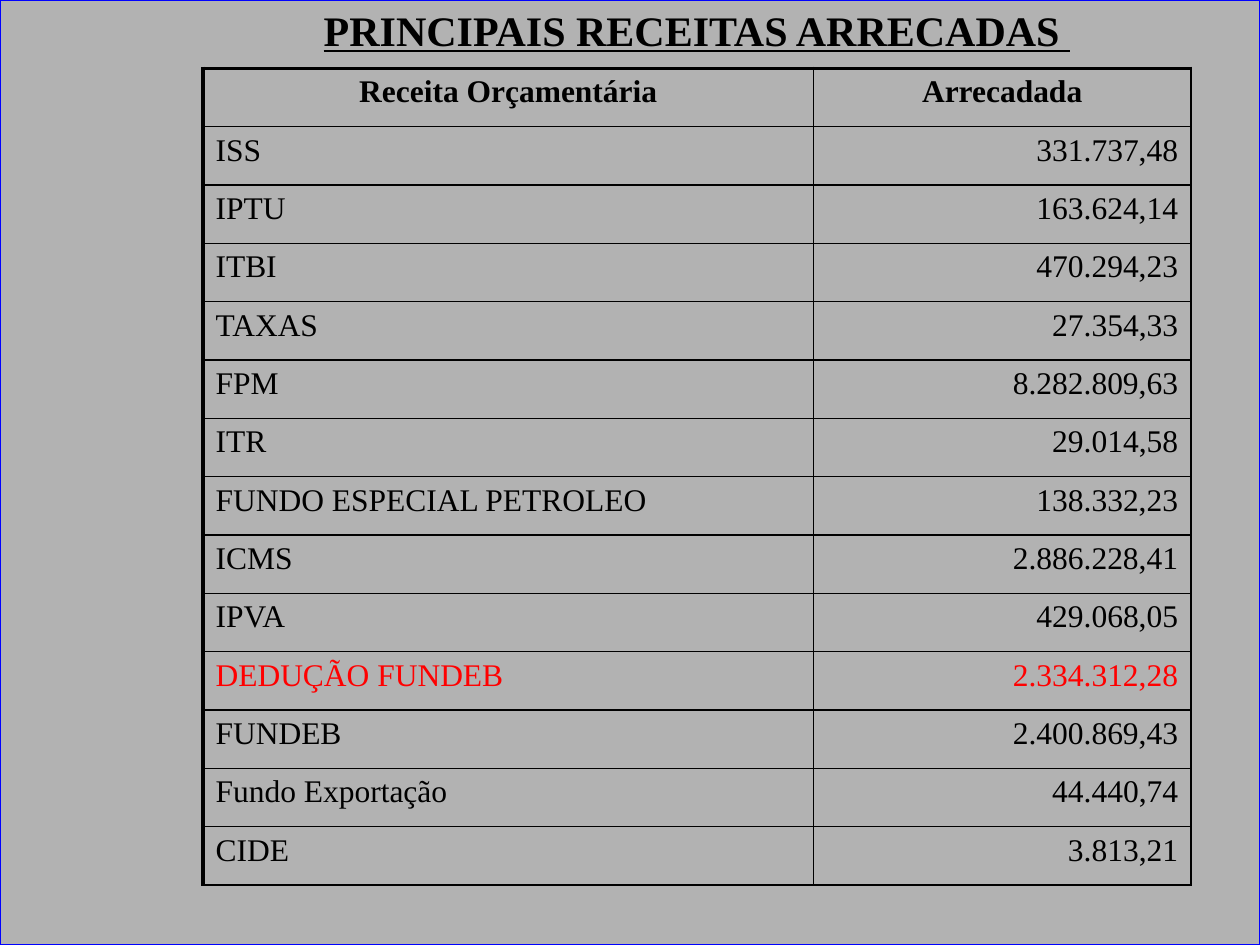
from dataclasses import dataclass
from typing import NamedTuple

from lxml import etree
from pptx import Presentation
from pptx.dml.color import RGBColor
from pptx.enum.shapes import MSO_SHAPE
from pptx.enum.text import MSO_ANCHOR, PP_ALIGN
from pptx.oxml.ns import qn
from pptx.util import Pt

RECT = MSO_SHAPE.RECTANGLE
TOP = MSO_ANCHOR.TOP
LEFT, CENTER, RIGHT = PP_ALIGN.LEFT, PP_ALIGN.CENTER, PP_ALIGN.RIGHT


@dataclass(frozen=True)
class Theme:
    font: str = "Times New Roman"
    ink: str = "000000"
    alert: str = "FF0000"
    back: str = "B2B2B2"
    frame: str = "0000FF"
    head: int = 24
    body: int = 18
    thin: float = 1
    thick: float = 2.25


class Income(NamedTuple):
    name: str
    total: str
    alert: bool = False


THEME = Theme()
WIDE, HIGH = 720, 540
COLS = (349, 215.5)
ROW = 33.35
HEADS = ("Receita Orçamentária", "Arrecadada")
ROWS = [
    Income("ISS", "331.737,48"),
    Income("IPTU", "163.624,14"),
    Income("ITBI", "470.294,23"),
    Income("TAXAS", "27.354,33"),
    Income("FPM", "8.282.809,63"),
    Income("ITR", "29.014,58"),
    Income("FUNDO ESPECIAL PETROLEO", "138.332,23"),
    Income("ICMS", "2.886.228,41"),
    Income("IPVA", "429.068,05"),
    Income("DEDUÇÃO FUNDEB", "2.334.312,28", alert=True),
    Income("FUNDEB", "2.400.869,43"),
    Income("Fundo Exportação", "44.440,74"),
    Income("CIDE", "3.813,21"),
]


def write(frame, text: str, size: int, color: str, align, bold: bool) -> None:
    frame.text = text
    para = frame.paragraphs[0]
    para.alignment = align
    font = para.font
    font.name, font.size, font.bold = THEME.font, Pt(size), bold
    font.color.rgb = RGBColor.from_string(color)


def edge(cell, left: float, top: float) -> None:
    """Draw the cell's four borders; right and bottom are always thin."""
    props = cell._tc.get_or_add_tcPr()
    sides = {"L": left, "R": THEME.thin, "T": top, "B": THEME.thin}
    for side, width in sides.items():
        line = etree.SubElement(props, qn(f"a:ln{side}"), w=str(Pt(width)))
        fill = etree.SubElement(line, qn("a:solidFill"))
        etree.SubElement(fill, qn("a:srgbClr"), val=THEME.ink)


def add_grid(slide) -> None:
    count = len(ROWS) + 1
    table = slide.shapes.add_table(
        count, len(COLS), Pt(116), Pt(39), Pt(sum(COLS)), Pt(ROW * count)
    ).table
    table.first_row = table.horz_banding = False
    for col, width in zip(table.columns, COLS):
        col.width = Pt(width)
    for r, item in enumerate([Income(*HEADS), *ROWS]):
        table.rows[r].height = Pt(ROW)
        color = THEME.alert if item.alert else THEME.ink
        for c, text in enumerate((item.name, item.total)):
            cell = table.cell(r, c)
            align = CENTER if r == 0 else (LEFT, RIGHT)[c]
            write(cell.text_frame, text, THEME.body, color, align, r == 0)
            edge(cell, THEME.thin if c else THEME.thick,
                 THEME.thin if r else THEME.thick)
            cell.fill.background()


def add_back(slide):
    back = slide.shapes.add_shape(RECT, 0, 0, Pt(WIDE), Pt(HIGH))
    back.shadow.inherit = False
    back.fill.solid()
    back.fill.fore_color.rgb = RGBColor.from_string(THEME.back)
    back.line.color.rgb = RGBColor.from_string(THEME.frame)
    back.line.width = Pt(0.75)
    return back


def set_title(title) -> None:
    title.left, title.top = Pt(76.5), Pt(-1)
    title.width, title.height = Pt(643.5), Pt(79)
    frame = title.text_frame
    frame.vertical_anchor = TOP
    frame.word_wrap = True
    write(frame, "PRINCIPAIS RECEITAS ARRECADAS ", THEME.head, THEME.ink,
          CENTER, True)
    frame.paragraphs[0].font.underline = True


def main() -> None:
    deck = Presentation()
    deck.slide_width, deck.slide_height = Pt(WIDE), Pt(HIGH)
    slide = deck.slides.add_slide(deck.slide_layouts[5])
    title = slide.shapes.title
    back = add_back(slide)
    add_grid(slide)
    set_title(title)
    back.element.getparent().append(title.element)
    deck.save("out.pptx")


if __name__ == "__main__":
    main()
